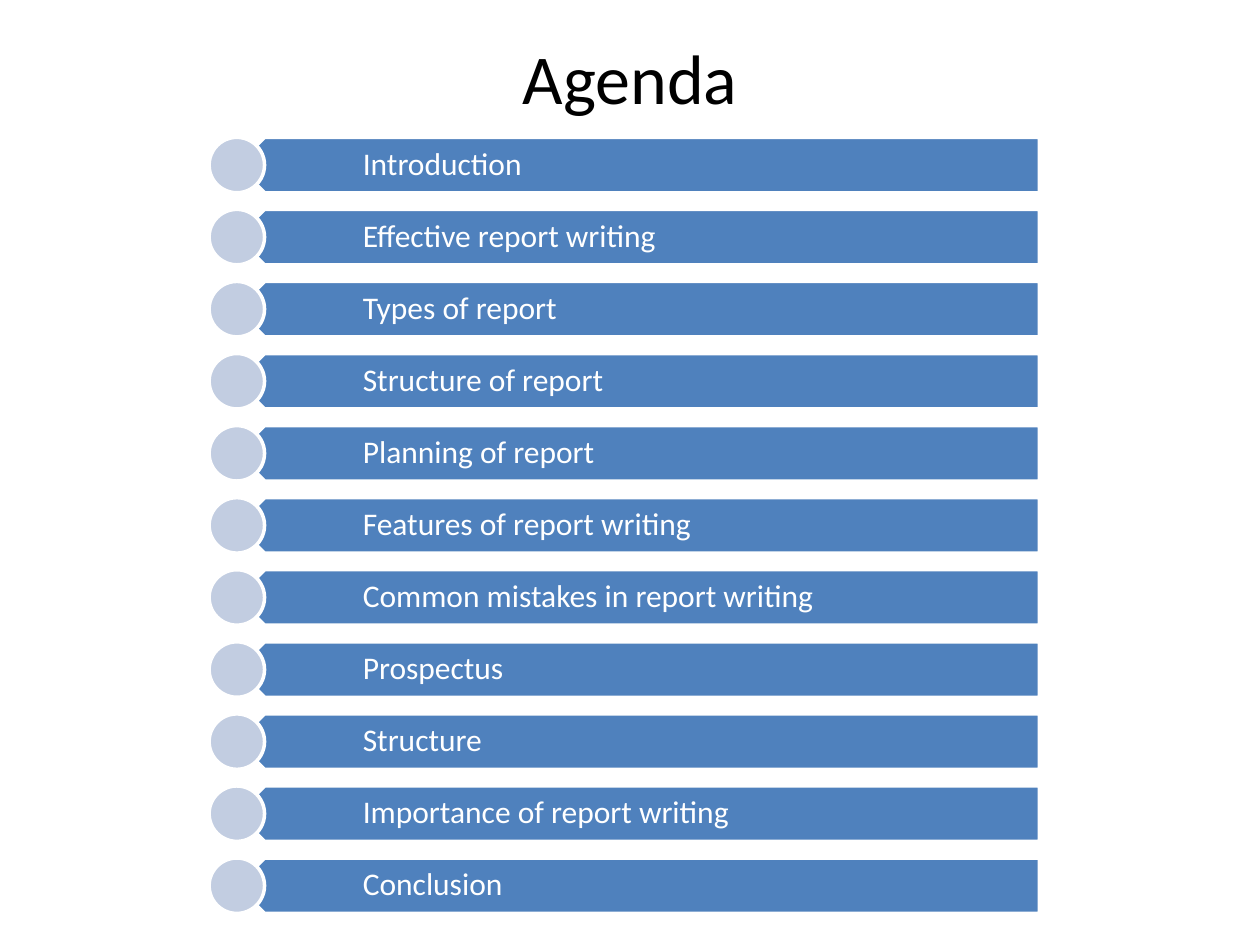
from pptx import Presentation
from pptx.dml.color import RGBColor as Rgb
from pptx.enum.shapes import MSO_SHAPE as Kind
from pptx.enum.text import MSO_ANCHOR as Anchor, PP_ALIGN as Align
from pptx.util import Inches, Pt

HUES = {"ink": "000000", "bar": "4F81BD", "dot": "C2CDE1", "white": "FFFFFF"}
TOPICS = [
    "Introduction",
    "Effective report writing",
    "Types of report",
    "Structure of report",
    "Planning of report",
    "Features of report writing",
    "Common mistakes in report writing",
    "Prospectus",
    "Structure",
    "Importance of report writing",
    "Conclusion",
]


class Deck:
    """Holds the style and current slide, on a grid of 100 columns by 75 rows."""

    def __init__(self, font="Calibri"):
        self.font = font
        self.prs = Presentation()
        self.prs.slide_width, self.prs.slide_height = Inches(10), Inches(7.5)
        self.slide = self.prs.slides.add_slide(self.prs.slide_layouts[5])

    def box(self, col, row, wide, high):
        across, down = self.prs.slide_width / 100, self.prs.slide_height / 75
        return int(col * across), int(row * down), int(wide * across), int(high * down)

    def fill_text(self, frame, text, size, hue, align):
        frame.text = text
        frame.word_wrap = True
        frame.vertical_anchor = Anchor.MIDDLE
        line = frame.paragraphs[0]
        line.alignment = align
        font = line.runs[0].font
        font.name, font.size = self.font, Pt(size)
        font.color.rgb = Rgb.from_string(HUES[hue])
        return line

    def title(self, text, *area):
        head = self.slide.shapes.title
        head.left, head.top, head.width, head.height = self.box(*area)
        self.fill_text(head.text_frame, text, 40, "ink", Align.CENTER)

    def shape(self, kind, hue, *area, turn=0):
        item = self.slide.shapes.add_shape(kind, *self.box(*area))
        item.rotation = turn
        item.shadow.inherit = False
        item.fill.solid()
        item.fill.fore_color.rgb = Rgb.from_string(HUES[hue])
        item.line.color.rgb = Rgb.from_string(HUES["white"])
        item.line.width = Pt(2)

    def label(self, text, *area):
        frame = self.slide.shapes.add_textbox(*self.box(*area)).text_frame
        frame.margin_left, frame.margin_right = Inches(1), Inches(0.14)
        frame.margin_top = frame.margin_bottom = Inches(0.07)
        line = self.fill_text(frame, text, 18, "white", Align.LEFT)
        line.line_spacing = 0.9

    def topic(self, text, row, left=18.8, wide=63.7, high=4.4):
        self.shape(Kind.PENTAGON, "bar", left, row, wide, high, turn=180)
        self.label(text, left, row, wide, high)
        self.shape(Kind.OVAL, "dot", left - high / 2, row, high, high)


def main():
    deck = Deck()
    deck.title("Agenda", 5, 1.7, 90, 8.7)
    for rank, text in enumerate(TOPICS):
        deck.topic(text, 10.9 + 5.72 * rank)
    deck.prs.save("out.pptx")


if __name__ == "__main__":
    main()
